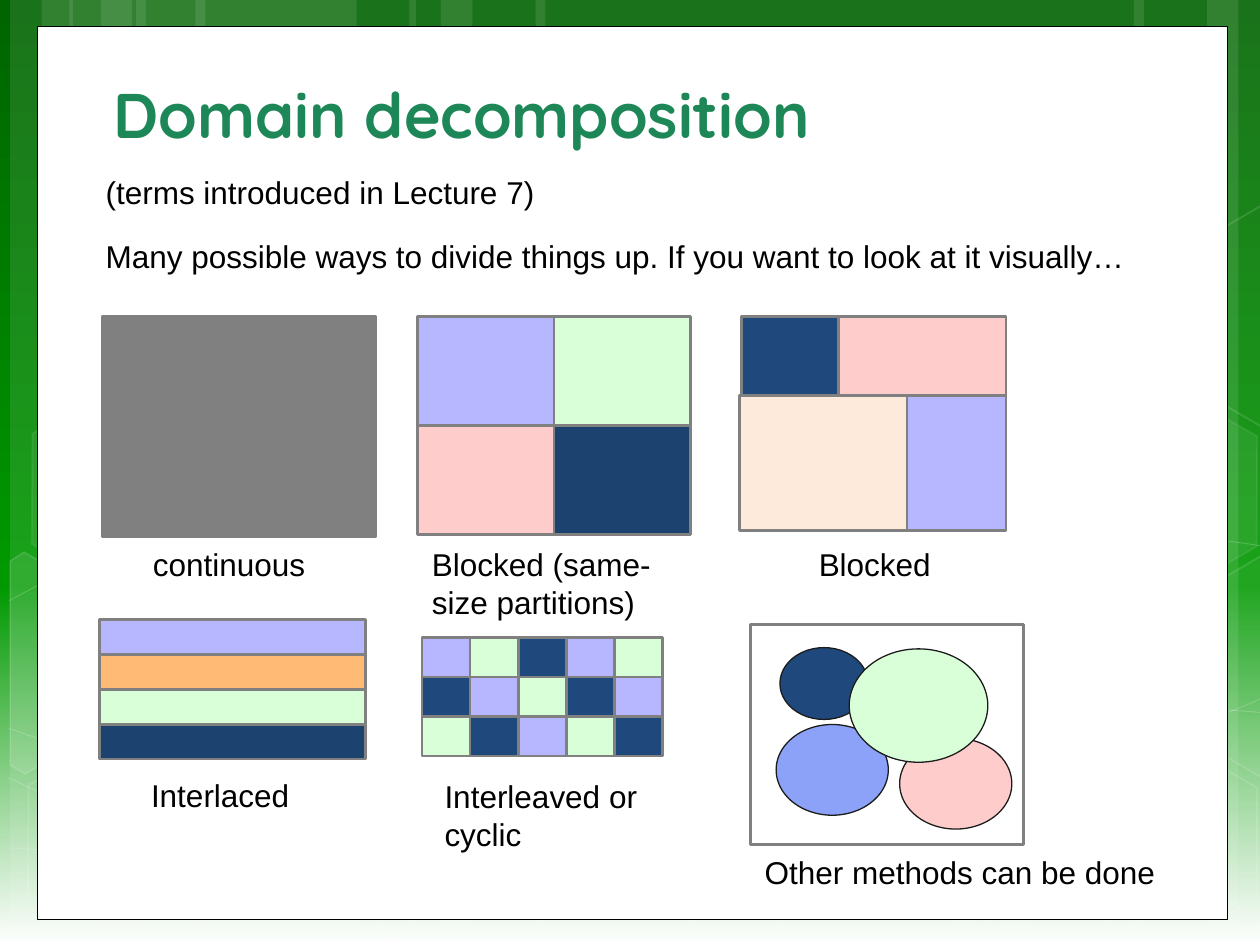
from dataclasses import dataclass
from math import cos, radians, sin

from lxml import etree
from pptx import Presentation
from pptx.dml.color import RGBColor
from pptx.enum.shapes import MSO_SHAPE
from pptx.enum.text import MSO_ANCHOR, MSO_AUTO_SIZE, PP_ALIGN
from pptx.oxml import parse_xml
from pptx.oxml.ns import qn
from pptx.util import Emu, Inches, Pt

RECT, OVAL, HEXAGON = MSO_SHAPE.RECTANGLE, MSO_SHAPE.OVAL, MSO_SHAPE.HEXAGON
LEFT, BOTTOM, TOP = PP_ALIGN.LEFT, MSO_ANCHOR.BOTTOM, MSO_ANCHOR.TOP
FIT_SHAPE, NO_FIT = MSO_AUTO_SIZE.SHAPE_TO_FIT_TEXT, MSO_AUTO_SIZE.NONE
COLUMNS, ROWS = 100, 75
TILT = 30


@dataclass(frozen=True)
class Theme:
    white: str = "FFFFFF"
    black: str = "000000"
    title: str = "1D8757"
    border: str = "808080"
    oval_edge: str = "1C1C1C"
    lilac: str = "B7B7FF"
    mint: str = "D9FFD9"
    pink: str = "FFCCCC"
    navy: str = "1F497D"
    deep_navy: str = "1C4270"
    cream: str = "FDEADA"
    orange: str = "FFBA75"
    blue: str = "8CA1F8"
    sky: tuple = ((0, "006400"), (62, "009900"), (100, "FFFFFF"))
    title_font: str = "Quicksand"
    body_font: str = "Arial"
    title_size: int = 36
    body_size: int = 18


def write_text(frame, text, *, font, size, color, bold=False):
    """Fill a text frame, one paragraph per line of text."""
    frame.text = text
    for paragraph in frame.paragraphs:
        paragraph.alignment = LEFT
        style = paragraph.runs[0].font
        style.name, style.size, style.bold = font, Pt(size), bold
        style.color.rgb = RGBColor.from_string(color)


def set_opacity(paint, percent):
    if percent < 100:
        for color in paint.iter(qn("a:srgbClr")):
            etree.SubElement(color, qn("a:alpha"), val=str(percent * 1000))


def turn(points, pivot, degrees):
    c, s = cos(radians(degrees)), sin(radians(degrees))
    px, py = pivot
    return [(px + (x - px) * c - (y - py) * s, py + (x - px) * s + (y - py) * c)
            for x, y in points]


def bend(shape):
    """Turn each three line segments of an outline into one cubic curve."""
    segments = list(shape._element.iter(qn("a:lnTo")))
    for start in range(0, len(segments), 3):
        curve = etree.Element(qn("a:cubicBezTo"))
        segments[start].addprevious(curve)
        for segment in segments[start:start + 3]:
            curve.append(segment[0])
            segment.getparent().remove(segment)


class Board:
    """Draws on one slide; lengths are in columns and rows of the grid."""

    def __init__(self, deck, theme):
        self.theme = theme
        self.master = deck.slide_master
        self.slide = deck.slides.add_slide(deck.slide_layouts[5])
        self.column = deck.slide_width / COLUMNS
        self.row = deck.slide_height / ROWS

    def box(self, left, top, width, height):
        return (Emu(round(left * self.column)), Emu(round(top * self.row)),
                Emu(round(width * self.column)), Emu(round(height * self.row)))

    def gradient(self):
        stops = "".join(f'<a:gs pos="{at * 1000}"><a:srgbClr val="{color}"/></a:gs>'
                        for at, color in self.theme.sky)
        fill = self.slide.background.fill
        fill.solid()
        solid = self.slide.background._cSld.find(".//" + qn("a:solidFill"))
        solid.getparent().replace(solid, parse_xml(
            '<a:gradFill xmlns:a="http://schemas.openxmlformats.org/drawingml/2006/main" '
            f'rotWithShape="1"><a:gsLst>{stops}</a:gsLst>'
            '<a:lin ang="5400000" scaled="0"/></a:gradFill>'))

    def move_to_master(self):
        """Make the decoration drawn so far part of the slide master."""
        title = self.slide.shapes.title
        decoration = [s for s in self.slide.shapes if s.shape_id != title.shape_id]
        for number, shape in enumerate(decoration, start=100):
            shape._element.nvSpPr.cNvPr.set("id", str(number))
            self.master.shapes._spTree.append(shape._element)

    def paint(self, shape, fill=None, line=None, weight=1.5, fill_opacity=100, line_opacity=100):
        shape.shadow.inherit = False
        if fill:
            shape.fill.solid()
            shape.fill.fore_color.rgb = RGBColor.from_string(fill)
            set_opacity(shape._element.spPr.find(qn("a:solidFill")), fill_opacity)
        else:
            shape.fill.background()
        if line:
            shape.line.color.rgb = RGBColor.from_string(line)
            shape.line.width = Pt(weight)
            set_opacity(shape._element.spPr.find(qn("a:ln")), line_opacity)
        else:
            shape.line.fill.background()
        return shape

    def shape(self, kind, place, **look):
        return self.paint(self.slide.shapes.add_shape(kind, *self.box(*place)), **look)

    def outline(self, points, close=False, **look):
        scaled = [(x * self.column, y * self.row) for x, y in points]
        builder = self.slide.shapes.build_freeform(*scaled[0])
        builder.add_line_segments(scaled[1:], close=close)
        return self.paint(builder.convert_to_shape(), **look)

    def hexagon(self, left, top, fill_opacity, line_opacity):
        white = self.theme.white
        cell = self.shape(HEXAGON, (left, top, 17.5, 15.2), fill=white if fill_opacity else None,
                          line=white, weight=1, fill_opacity=fill_opacity, line_opacity=line_opacity)
        cell.adjustments[0] = 0.285
        cell.rotation = TILT

    def tile(self, place, color):
        self.shape(RECT, place, fill=color, line=self.theme.border)

    def mosaic(self, place, color_rows):
        """Divide a rectangle into equal tiles."""
        left, top, width, height = place
        tile_height = height / len(color_rows)
        for r, colors in enumerate(color_rows):
            tile_width = width / len(colors)
            for c, color in enumerate(colors):
                self.tile((left + c * tile_width, top + r * tile_height,
                           tile_width, tile_height), color)

    def title(self, text, place):
        heading = self.slide.shapes.title
        heading.left, heading.top, heading.width, heading.height = self.box(*place)
        heading.text_frame.vertical_anchor = BOTTOM
        heading.text_frame.auto_size = NO_FIT
        write_text(heading.text_frame, text, font=self.theme.title_font,
                   size=self.theme.title_size, color=self.theme.title, bold=True)

    def label(self, text, place, wrap=False):
        frame = self.slide.shapes.add_textbox(*self.box(*place)).text_frame
        frame.word_wrap, frame.auto_size, frame.vertical_anchor = wrap, FIT_SHAPE, TOP
        write_text(frame, text, font=self.theme.body_font,
                   size=self.theme.body_size, color=self.theme.black)


STRIPES = ((10.8, 17.5), (0.8, 5), (3.3, 8.3), (15.5, 17.5), (5.5, 5), (8, 8.3),
           (73.3, 17.5), (95.8, 5), (90, 8.3), (42.5, 30.8), (32.5, 5), (35, 8.3))
CURVES = (
    ((0.7, 67.3), (6.1, 67.6), (11.5, 67.9), (19, 67.8), (26.5, 67.7), (35.8, 67.5), (45.8, 66.5),
     (55.8, 65.5), (70, 63.6), (79.2, 61.7), (88.3, 59.8), (97.7, 56.8), (100.7, 55.1)),
    ((0.7, 47.7), (3.6, 46.1), (6.5, 44.6), (12.1, 43.1), (17.8, 41.6), (25.9, 39.4), (34.7, 38.7),
     (43.6, 38), (54.4, 37.9), (65.4, 38.7), (76.4, 39.5), (94.7, 42.6), (100.7, 43.4)),
    ((0.6, 61.7), (12.7, 67.2), (24.7, 72.7), (33.4, 74.9)),
    ((0.7, 57.8), (3.8, 58.9), (7, 60), (12.8, 61.6), (18.6, 63.1), (27.3, 65.6), (35.7, 67.3),
     (44, 69), (54.5, 70.8), (62.8, 71.8), (71.1, 72.9), (80, 73.3), (85.3, 73.6),
     (90.5, 74), (91.9, 73.8), (94.5, 73.8), (97.1, 73.7), (98.9, 73.5), (100.7, 73.4)),
    ((24.2, 74.9), (26, 72.9), (27.8, 70.9), (30.2, 69.1), (32.6, 67.3), (36, 65.3), (38.8, 63.9),
     (41.6, 62.5), (43.3, 61.9), (47, 60.9), (50.6, 59.9), (57.3, 58.5), (60.8, 57.8),
     (64.4, 57.1), (64.9, 57.1), (68, 56.9), (71.1, 56.6), (76, 56.3), (79.4, 56.2),
     (82.9, 56.1), (95, 56), (100.6, 56.6)),
)
HEXAGONS = ((33.4, 3.6, 4, 8), (49.7, 58.9, 6, 12), (1.1, 59.1, 0, 12), (1.4, 31.2, 7, 8),
            (17.4, 59.2, 0, 12), (83.4, 59.3, 0, 12), (83.4, 31.4, 7, 8))
LEFT_CUT = ((0.8, 44.5), (1.9, 43.8), (9.6, 48.2), (9.5, 57), (2, 61.4), (0.8, 60.7))
RIGHT_CUT = ((92.6, 20.7), (100.1, 16.3), (100.9, 16.8), (100.9, 33.5), (100.2, 33.9), (92.6, 29.5))


def draw_backdrop(board):
    white = board.theme.white
    board.gradient()
    for left, width in STRIPES:
        board.shape(RECT, (left, 0, width, ROWS), fill=white, fill_opacity=10)
    for curve in CURVES:
        bend(board.outline(curve, line=white, weight=0.5, line_opacity=20))
    for cell in HEXAGONS:
        board.hexagon(*cell)
    lower_right = [(x, y + 27.8) for x, y in RIGHT_CUT]
    for points, pivot, fill, opacity in ((LEFT_CUT, (3.6, 53.5), white, 10),
                                         (lower_right, (98.5, 52), white, 4),
                                         (RIGHT_CUT, (98.5, 24.1), None, 100)):
        cut = board.outline(turn(points, pivot, -TILT), close=True, fill=fill,
                            fill_opacity=opacity, line=white, weight=1, line_opacity=12)
        cut.rotation = TILT
    board.shape(RECT, (3, 2.1, 94.4, 70.9), fill=white, line=board.theme.black, weight=0.5)
    board.move_to_master()


def draw_partitions(board):
    t = board.theme
    board.tile((8.1, 25.1, 21.75, 17.5), t.border)
    board.mosaic((33.15, 25.1, 21.65, 17.3), ((t.lilac, t.mint), (t.pink, t.deep_navy)))
    for left, top, color in ((58.85, 25.1, t.navy), (66.55, 25.1, t.pink),
                             (66.55, 31.4, t.lilac), (58.7, 31.4, t.cream)):
        board.tile((left, top, 13.3, 10.7), color)
    board.mosaic((7.9, 49.15, 21.1, 11.1), ((t.lilac,), (t.orange,), (t.mint,), (t.deep_navy,)))
    cycle = (t.lilac, t.mint, t.navy)
    board.mosaic((33.5, 50.6, 19.1, 9.4),
                 [[cycle[(c - r) % 3] for c in range(5)] for r in range(3)])
    board.tile((59.55, 49.55, 21.7, 17.5), t.white)
    for place, color in (((61.9, 51.4, 7, 5.7), t.navy), ((71.4, 58.6, 8.9, 7.2), t.pink),
                         ((61.6, 57.5, 8.9, 7.2), t.blue), ((67.4, 51.5, 11, 9), t.mint)):
        board.shape(OVAL, place, fill=color, line=t.oval_edge, weight=0.75)


def main():
    deck = Presentation()
    deck.slide_width, deck.slide_height = Inches(10), Inches(7.5)
    board = Board(deck, Theme())
    draw_backdrop(board)
    board.title("Domain decomposition", (8, 4.9, 84.2, 7.6))
    board.label("Many possible ways to divide things up. If you want to look at it visually…",
                (7.4, 18.3, 83.6, 4))
    draw_partitions(board)
    board.label("continuous", (11.15, 42.8, 14.2, 4))
    board.label("Blocked (same-size partitions)", (33.3, 42.8, 21.4, 7.1), wrap=True)
    board.label("Blocked", (64, 42.8, 11, 4))
    board.label("Interlaced", (11, 61.1, 13.1, 4))
    board.label("Interleaved or\ncyclic", (34.3, 61.2, 17.4, 7.1))
    board.label("Other methods can be done", (59.7, 67.2, 33.3, 4))
    board.label("(terms introduced in Lecture 7)", (7.4, 13.25, 36.4, 4))
    deck.save("out.pptx")


if __name__ == "__main__":
    main()
